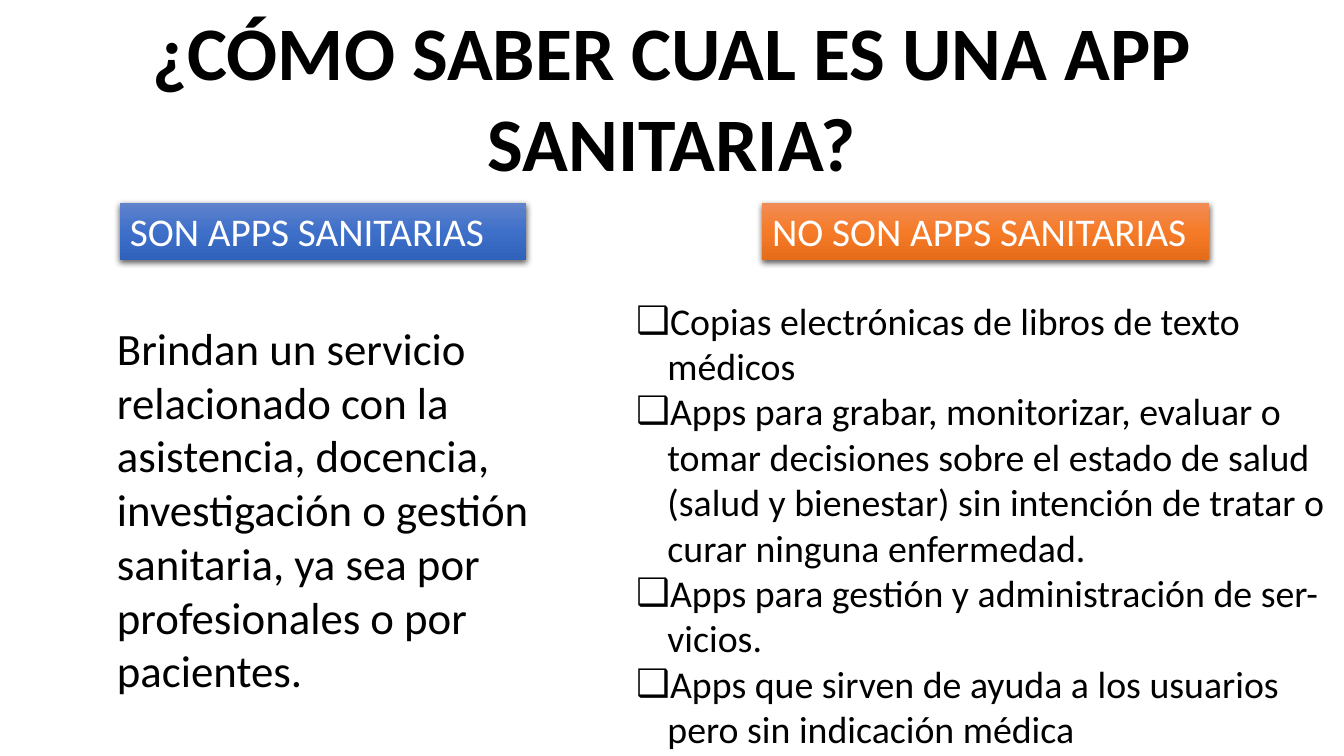
"""Build a slide that tells health apps apart from other apps."""
from copy import deepcopy
from dataclasses import dataclass

from lxml.etree import SubElement
from pptx import Presentation
from pptx.dml.color import RGBColor
from pptx.enum.shapes import MSO_SHAPE as Shape
from pptx.enum.text import MSO_ANCHOR as Anchor, MSO_AUTO_SIZE as AutoSize, PP_ALIGN as Align
from pptx.oxml.ns import qn
from pptx.util import Inches, Pt


@dataclass(frozen=True)
class Theme:
    font: str = "Calibri"
    dark: str = "000000"
    light: str = "FFFFFF"
    blue: tuple = ("6183CB", "3E70CA", "3062BB")
    orange: tuple = ("F18C57", "F67B28", "E56C19")
    title_size: int = 54
    header_size: int = 28
    summary_size: int = 32
    list_size: int = 27


def write(box, lines, size, color, bold=False, align=Align.LEFT, bullet=None, hang=0):
    frame = box.text_frame
    frame.word_wrap = True
    frame.auto_size = AutoSize.NONE
    frame.vertical_anchor = Anchor.TOP
    for index, line in enumerate(lines):
        para = frame.add_paragraph() if index else frame.paragraphs[0]
        para.alignment = align
        para.space_before = Pt(0)
        indent = para._p.get_or_add_pPr()
        indent.set("marL", str(Inches(hang)))
        indent.set("indent", str(-Inches(hang)))
        if bullet:
            SubElement(indent, qn("a:buChar"), char=bullet)
        else:
            SubElement(indent, qn("a:buNone"))
        span = para.add_run()
        span.text = line
        span.font.name = theme.font
        span.font.size = Pt(size)
        span.font.bold = bold
        span.font.color.rgb = RGBColor.from_string(color)


def place(box, left, top, width, height):
    box.left, box.top = Inches(left), Inches(top)
    box.width, box.height = Inches(width), Inches(height)


theme = Theme()
deck = Presentation()
deck.slide_width, deck.slide_height = Inches(13.33), Inches(7.5)
page = deck.slides.add_slide(deck.slide_layouts.get_by_name("Two Content"))
title, summary, exclusions = page.placeholders

place(title, 0, 0, 13.33, 1.92)
write(title, ["¿CÓMO SABER CUAL ES UNA APP SANITARIA?"], theme.title_size, theme.dark,
      bold=True, align=Align.CENTER)

headers = [
    ("SON APPS SANITARIAS", 1.19, 4.03, theme.blue),
    ("NO SON APPS SANITARIAS", 7.56, 4.43, theme.orange),
]
for label, left, width, colors in headers:
    header = page.shapes.add_shape(
        Shape.RECTANGLE, Inches(left), Inches(2.01), Inches(width), Inches(0.57))
    header.line.fill.background()
    header.fill.gradient()
    header.fill.gradient_angle = 270
    stop_list = header._element.spPr.find(".//" + qn("a:gsLst"))
    stop_list.insert(1, deepcopy(stop_list[0]))
    for index, (stop, color) in enumerate(zip(header.fill.gradient_stops, colors)):
        stop.position = index / 2
        stop.color.rgb = RGBColor.from_string(color)
    header.shadow.inherit = False
    effects = header._element.spPr.find(qn("a:effectLst"))
    shadow = SubElement(effects, qn("a:outerShdw"), blurRad=str(Pt(4.5)), dist=str(Pt(1.5)),
                        dir="5400000", algn="ctr", rotWithShape="0")
    shade = SubElement(shadow, qn("a:srgbClr"), val=theme.dark)
    SubElement(shade, qn("a:alpha"), val="63000")
    write(header, [label], theme.header_size, theme.light)

place(summary, 1.06, 3.13, 4.3, 4.17)
write(summary, [
    "Brindan un servicio relacionado con la asistencia, docencia, investigación o gestión "
    "sanitaria, ya sea por profesionales o por pacientes.",
], theme.summary_size, theme.dark)

place(exclusions, 6.21, 2.9, 7.12, 4.64)
write(exclusions, [
    "Copias electrónicas de libros de texto médicos",
    "Apps para grabar, monitorizar, evaluar o tomar decisiones sobre el estado de salud "
    "(salud y bienestar) sin intención de tratar o curar ninguna enfermedad.",
    "Apps para gestión y administración de ser- vicios.",
    "Apps que sirven de ayuda a los usuarios pero sin indicación médica",
], theme.list_size, theme.dark, bullet="❑", hang=0.31)

deck.save("out.pptx")
